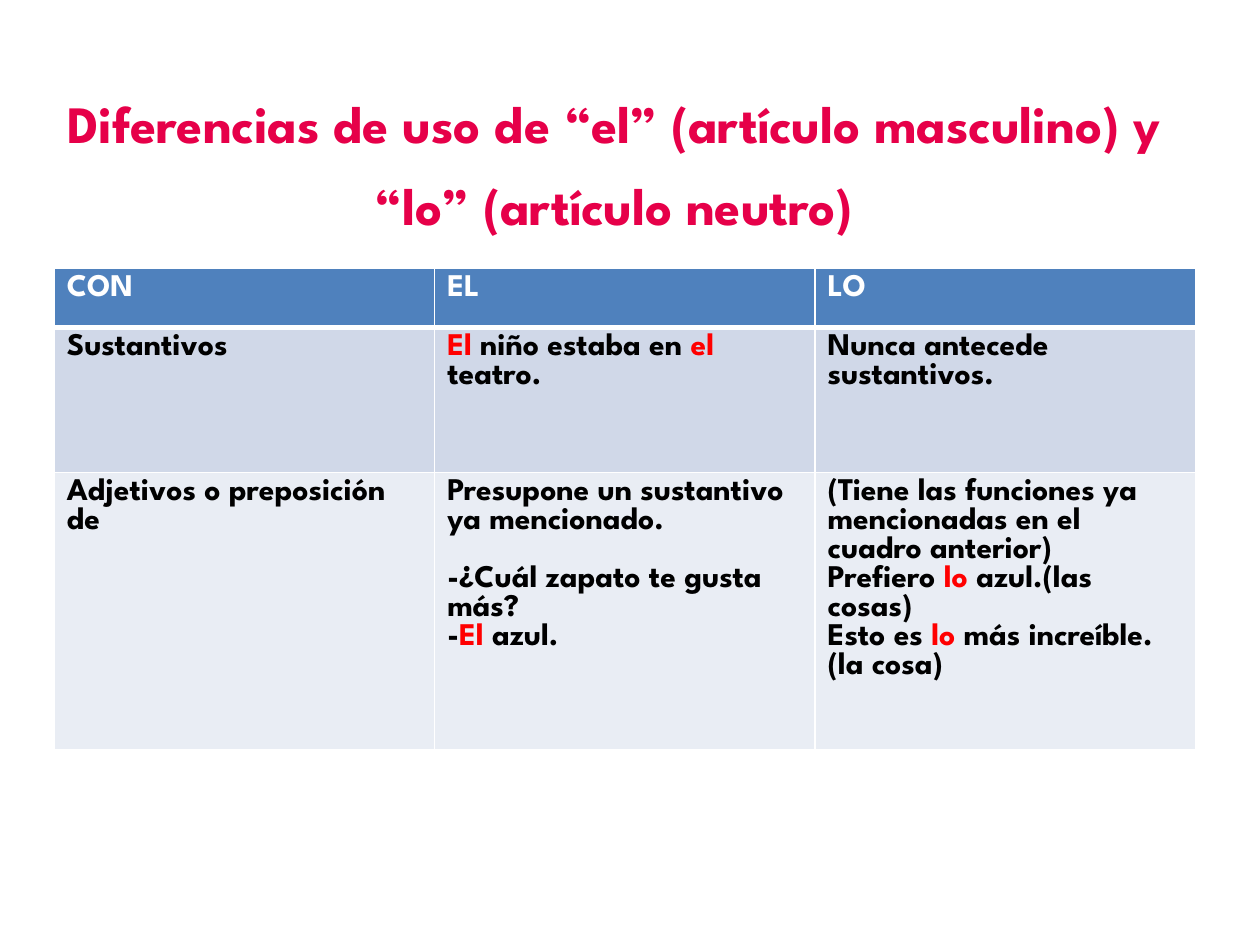
import pptx
import pptx.dml.color
import pptx.enum.text
import pptx.oxml
import pptx.oxml.ns
import pptx.util
from pptx.util import Inches

RGBColor = pptx.dml.color.RGBColor
CRIMSON = RGBColor(0xE6, 0x00, 0x49)
WHITE = RGBColor(0xFF, 0xFF, 0xFF)
BLACK = RGBColor(0x00, 0x00, 0x00)
RED = RGBColor(0xFF, 0x00, 0x00)
HEADER_BLUE = RGBColor(0x4F, 0x81, 0xBD)
BAND_DARK = RGBColor(0xD0, 0xD8, 0xE8)
BAND_LIGHT = RGBColor(0xE9, 0xED, 0xF4)

FONT = "League Spartan"
TITLE = "Diferencias de uso de “el” (artículo masculino) y “lo” (artículo neutro)"

# One list of paragraphs per cell; text between asterisks is red.
ROWS = [
    [["CON"], ["EL"], ["LO"]],
    [["Sustantivos"],
     ["*El *niño estaba en *el* teatro."],
     ["Nunca antecede sustantivos."]],
    [["Adjetivos o preposición de"],
     ["Presupone un sustantivo ya mencionado.",
      "-¿Cuál zapato te gusta más?",
      "-*El *azul."],
     ["(Tiene las funciones ya mencionadas en el cuadro anterior)",
      "Prefiero *lo* azul.(las cosas)",
      "Esto es *lo* más increíble. (la cosa)"]],
]
ROW_HEIGHTS = [0.47, 1.15, 2.2]
ROW_FILLS = [HEADER_BLUE, BAND_DARK, BAND_LIGHT]
COLUMN_WIDTH = 3.02


def format_font(font, size, color):
    font.name = FONT
    font.size = pptx.util.Pt(size)
    font.bold = True
    font.color.rgb = color


def add_title(slide):
    title = slide.shapes.title
    title.left, title.top = Inches(0.27), Inches(0.52)
    title.width, title.height = Inches(9.21), Inches(1.11)
    frame = title.text_frame
    frame.text = TITLE
    frame.word_wrap = True
    frame.vertical_anchor = pptx.enum.text.MSO_ANCHOR.TOP
    para = frame.paragraphs[0]
    para.alignment = pptx.enum.text.PP_ALIGN.CENTER
    para.line_spacing = 1.3
    format_font(para.runs[0].font, 30, CRIMSON)


def write_marked_text(para, text, color):
    """Add runs to a paragraph, with the parts between asterisks in red."""
    for index, part in enumerate(text.split("*")):
        if part:
            span = para.add_run()
            span.text = part
            format_font(span.font, 18, RED if index % 2 else color)


def set_borders(cell, top, bottom):
    """Draw white borders, with the top and bottom widths in points."""
    properties = cell._tc.get_or_add_tcPr()
    widths = {"lnL": 1, "lnR": 1, "lnT": top, "lnB": bottom}
    for position, (side, width) in enumerate(widths.items()):
        line = pptx.oxml.parse_xml(
            f'<a:{side} {pptx.oxml.ns.nsdecls("a")} w="{pptx.util.Pt(width)}">'
            f'<a:solidFill><a:srgbClr val="{WHITE}"/></a:solidFill></a:{side}>')
        properties.insert(position, line)


def fill_cell(cell, paragraphs, fill, color):
    cell.fill.solid()
    cell.fill.fore_color.rgb = fill
    frame = cell.text_frame
    for index, text in enumerate(paragraphs):
        para = frame.add_paragraph() if index else frame.paragraphs[0]
        write_marked_text(para, text, color)


def add_usage_table(slide):
    frame = slide.shapes.add_table(
        len(ROWS), len(ROWS[0]), Inches(0.43), Inches(2.13),
        Inches(COLUMN_WIDTH * len(ROWS[0])), Inches(sum(ROW_HEIGHTS)))
    table = frame.table
    for column in table.columns:
        column.width = Inches(COLUMN_WIDTH)
    for row_index, row in enumerate(ROWS):
        table.rows[row_index].height = Inches(ROW_HEIGHTS[row_index])
        color = BLACK if row_index else WHITE
        for column_index, paragraphs in enumerate(row):
            cell = table.cell(row_index, column_index)
            fill_cell(cell, paragraphs, ROW_FILLS[row_index], color)
            set_borders(cell, top=3 if row_index == 1 else 1,
                        bottom=3 if row_index == 0 else 1)
    dialogue = table.cell(2, 1).text_frame.paragraphs[1]
    dialogue.space_before = pptx.util.Pt(16.5)


def main():
    deck = pptx.Presentation()
    deck.slide_width, deck.slide_height = Inches(10), Inches(7.5)
    slide = deck.slides.add_slide(deck.slide_layouts[5])
    add_title(slide)
    add_usage_table(slide)
    deck.save("out.pptx")


if __name__ == "__main__":
    main()
